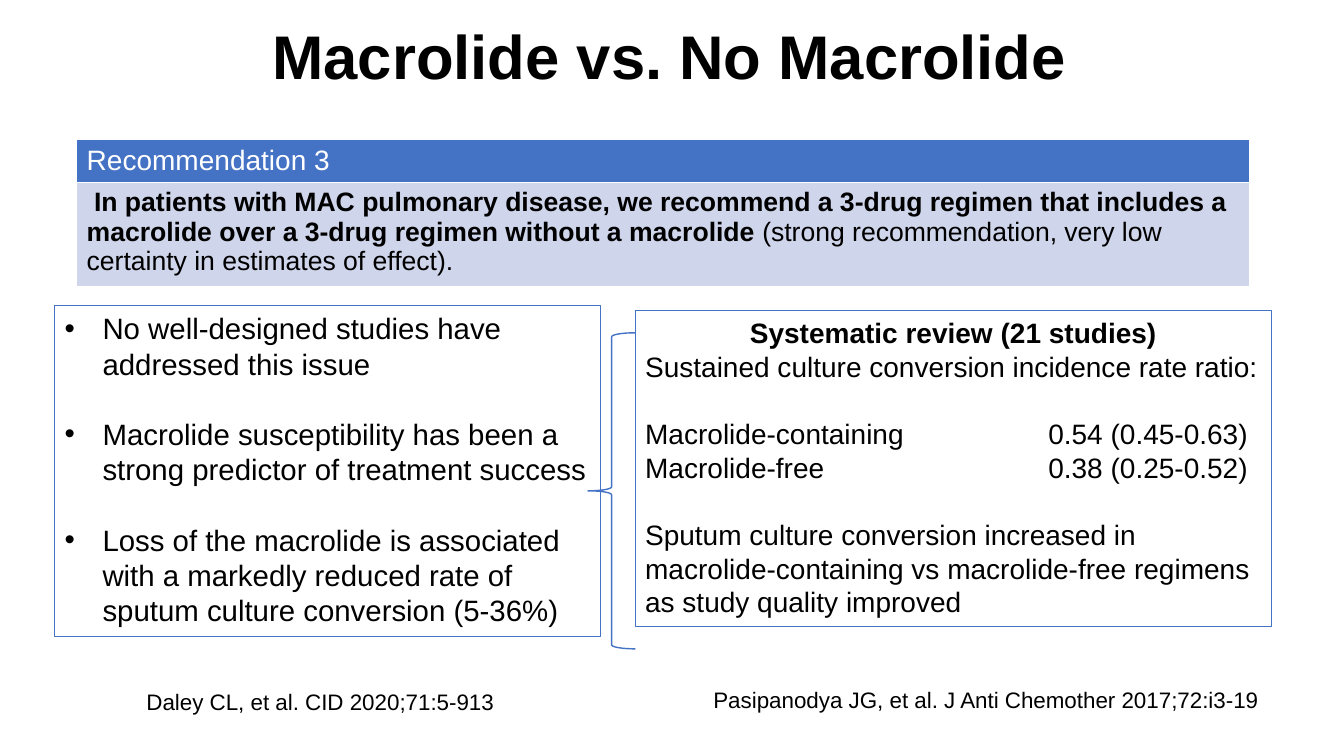
from lxml.etree import SubElement
from pptx import Presentation
from pptx.dml.color import RGBColor
from pptx.enum.shapes import MSO_SHAPE as Shape
from pptx.enum.text import MSO_ANCHOR as Anchor, MSO_AUTO_SIZE as AutoSize, PP_ALIGN as Align
from pptx.oxml.ns import qn
from pptx.util import Emu, Pt

EMU_PER_PX = 9525
FONT = "Arial"
COLORS = {"ink": "000000", "paper": "FFFFFF", "accent": "4472C4", "band": "CFD5EA"}

FINDINGS = [
    "No well-designed studies have addressed this issue",
    "Macrolide susceptibility has been a strong predictor of treatment success",
    "Loss of the macrolide is associated with a markedly reduced rate of "
    "sputum culture conversion (5-36%)",
]
RATE_RATIOS = [
    ("Macrolide-containing", "0.54 (0.45-0.63)"),
    ("Macrolide-free", "0.38 (0.25-0.52)"),
]
CITATIONS = [
    ("Daley CL, et al. CID 2020;71:5-913", (130, 651, 365, 36), True),
    ("Pasipanodya JG, et al. J Anti Chemother 2017;72:i3-19", (670, 649, 545, 36), False),
]


def px(length):
    return Emu(length * EMU_PER_PX)


def box(*lengths):
    return [px(length) for length in lengths]


def color(name):
    return RGBColor.from_string(COLORS[name])


def place(shape, *bounds):
    shape.left, shape.top, shape.width, shape.height = box(*bounds)


def outline(shape, width):
    shape.fill.background()
    shape.line.color.rgb = color("accent")
    shape.line.width = Pt(width)


def add_run(paragraph, text, size, bold=False, ink="ink"):
    run = paragraph.add_run()
    run.text = text
    run.font.name = FONT
    run.font.size = Pt(size)
    run.font.bold = bold
    run.font.color.rgb = color(ink)


def next_paragraph(frame, gap=0, align=Align.LEFT):
    """Return the empty first paragraph, or a new one after a gap in points."""
    first = frame.paragraphs[0]
    paragraph = frame.add_paragraph() if first.runs else first
    paragraph.alignment = align
    paragraph.line_spacing = 1.0
    paragraph.space_before = Pt(gap)
    return paragraph


def set_indent(paragraph, margin, first_line):
    properties = paragraph._p.get_or_add_pPr()
    properties.set("marL", str(px(margin)))
    properties.set("indent", str(px(first_line)))
    return properties


def add_bullet(paragraph):
    properties = set_indent(paragraph, 36, -36)
    SubElement(properties, qn("a:buFont"), typeface=FONT)
    SubElement(properties, qn("a:buChar"), char="•")


def add_tab_stop(paragraph, position):
    tabs = SubElement(paragraph._p.get_or_add_pPr(), qn("a:tabLst"))
    SubElement(tabs, qn("a:tab"), pos=str(px(position)), algn="l")


def fill_title(title):
    place(title, 86, 5, 1104, 104)
    title.text_frame.vertical_anchor = Anchor.MIDDLE
    paragraph = title.text_frame.paragraphs[0]
    paragraph.alignment = Align.CENTER
    paragraph.line_spacing = 0.9
    add_run(paragraph, "Macrolide vs. No Macrolide", 44, bold=True)


def add_recommendation(slide):
    table = slide.shapes.add_table(2, 1, *box(73, 133, 1117, 140)).table
    heading, advice = table.cell(0, 0), table.cell(1, 0)
    for row, cell, height, fill in zip(table.rows, (heading, advice), (41, 99), ("accent", "band")):
        row.height = px(height)
        cell.fill.solid()
        cell.fill.fore_color.rgb = color(fill)
    add_run(heading.text_frame.paragraphs[0], "Recommendation 3", 20, ink="paper")
    paragraph = advice.text_frame.paragraphs[0]
    set_indent(paragraph, 0, 7)
    add_run(paragraph, "In patients with MAC pulmonary disease, we recommend a 3-drug regimen "
            "that includes a macrolide over a 3-drug regimen without a macrolide ", 19, bold=True)
    add_run(paragraph, "(strong recommendation, very low certainty in estimates of effect).", 19)


def fill_findings(findings):
    place(findings, 52, 291, 520, 315)
    outline(findings, 0.75)
    frame = findings.text_frame
    frame.auto_size = AutoSize.NONE
    for number, finding in enumerate(FINDINGS):
        paragraph = next_paragraph(frame, gap=25 if number else 0)
        add_bullet(paragraph)
        add_run(paragraph, finding, 21)


def add_review(slide):
    review = slide.shapes.add_shape(Shape.RECTANGLE, *box(605, 296, 606, 301))
    review.shadow.inherit = False
    outline(review, 0.75)
    frame = review.text_frame
    frame.word_wrap = True
    frame.vertical_anchor = Anchor.TOP
    add_run(next_paragraph(frame, align=Align.CENTER), "Systematic review (21 studies)", 20, bold=True)
    add_run(next_paragraph(frame), "Sustained culture conversion incidence rate ratio:", 20)
    for number, (regimen, ratio) in enumerate(RATE_RATIOS):
        paragraph = next_paragraph(frame, gap=0 if number else 24)
        add_tab_stop(paragraph, 384)
        add_run(paragraph, f"{regimen}\t{ratio}", 20)
    add_run(next_paragraph(frame, gap=24), "Sputum culture conversion increased in macrolide-containing "
            "vs macrolide-free regimens as study quality improved", 20)


def add_brace(slide):
    brace = slide.shapes.add_shape(Shape.LEFT_BRACE, *box(560, 317, 45, 301))
    brace.shadow.inherit = False
    outline(brace, 1)


def add_citation(slide, text, bounds, wraps):
    frame = slide.shapes.add_textbox(*box(*bounds)).text_frame
    frame.word_wrap = wraps
    add_run(frame.paragraphs[0], text, 16)


def main():
    deck = Presentation()
    deck.slide_width, deck.slide_height = box(1280, 720)
    slide = deck.slides.add_slide(deck.slide_layouts[1])
    fill_title(slide.shapes.title)
    add_recommendation(slide)
    fill_findings(slide.placeholders[1])
    add_review(slide)
    for citation in CITATIONS:
        add_citation(slide, *citation)
    add_brace(slide)
    deck.save("out.pptx")


if __name__ == "__main__":
    main()
